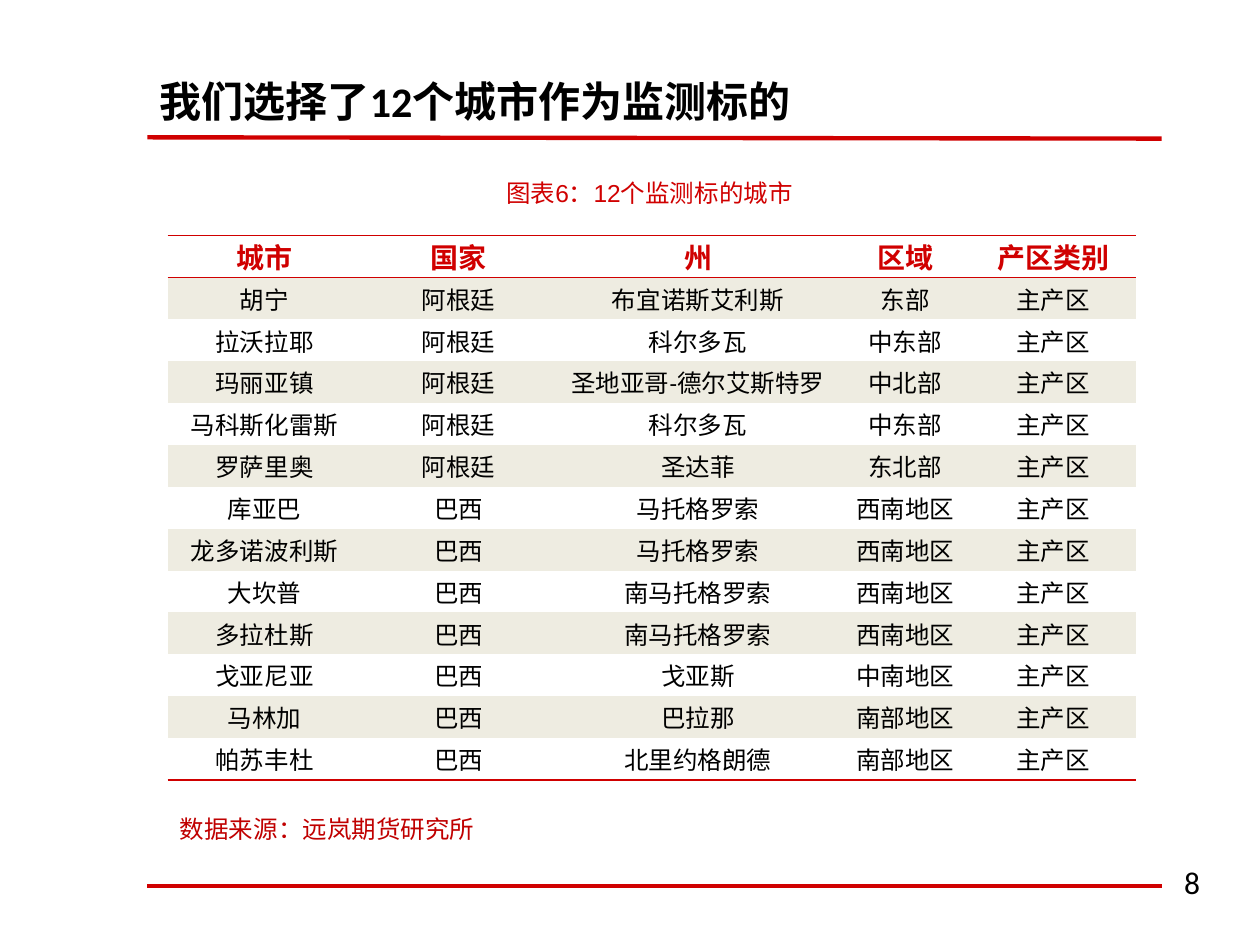
"""Build the slide that lists the twelve monitored cities."""
from typing import NamedTuple

from lxml.etree import SubElement
from pptx import Presentation
from pptx.dml.color import RGBColor
from pptx.enum.shapes import MSO_CONNECTOR as Connector
from pptx.enum.text import MSO_ANCHOR as Anchor, MSO_AUTO_SIZE as AutoSize, PP_ALIGN as Align
from pptx.oxml.ns import qn
from pptx.util import Inches, Pt

RED, DARK_RED, BLACK, BAND = "D00000", "C00000", "000000", "EEECE1"
LATIN, CHINESE, NUMERAL = "Calibri", "Noto Sans CJK SC", "Arial"


class Style(NamedTuple):
    size: float
    color: str = BLACK
    font: str = LATIN
    bold: bool = False


class Caption(NamedTuple):
    left: float
    top: float
    width: float
    height: float
    runs: list[tuple[str, Style]]
    align: Align = Align.LEFT
    anchor: Anchor = Anchor.TOP
    wrap: bool = True
    grow: bool = True


class City(NamedTuple):
    name: str
    country: str
    state: str
    region: str
    category: str = "主产区"


HEADER = City("城市", "国家", "州", "区域", "产区类别")
CITIES = [
    City("胡宁", "阿根廷", "布宜诺斯艾利斯", "东部"),
    City("拉沃拉耶", "阿根廷", "科尔多瓦", "中东部"),
    City("玛丽亚镇", "阿根廷", "圣地亚哥-德尔艾斯特罗", "中北部"),
    City("马科斯化雷斯", "阿根廷", "科尔多瓦", "中东部"),
    City("罗萨里奥", "阿根廷", "圣达菲", "东北部"),
    City("库亚巴", "巴西", "马托格罗索", "西南地区"),
    City("龙多诺波利斯", "巴西", "马托格罗索", "西南地区"),
    City("大坎普", "巴西", "南马托格罗索", "西南地区"),
    City("多拉杜斯", "巴西", "南马托格罗索", "西南地区"),
    City("戈亚尼亚", "巴西", "戈亚斯", "中南地区"),
    City("马林加", "巴西", "巴拉那", "南部地区"),
    City("帕苏丰杜", "巴西", "北里约格朗德", "南部地区"),
]
COLUMN_WIDTHS = [1.54, 1.54, 2.26, 1.03, 1.32]
RULES = [(1.09, 1.1), (7.03, 7.03)]

FIGURE_TEXT = Style(14, RED, CHINESE)
FIGURE_NUMBER = Style(14, RED, NUMERAL)
CAPTIONS = [
    Caption(1.17, 0.55, 8.2, 0.55,
            [("我们选择了12个城市作为监测标的", Style(24, bold=True))], grow=False),
    Caption(1.17, 1.36, 7.97, 0.34,
            [("图表", FIGURE_TEXT), ("6", FIGURE_NUMBER), ("：", FIGURE_TEXT),
             ("12", FIGURE_NUMBER), ("个监测标的城市", FIGURE_TEXT)],
            Align.CENTER, Anchor.MIDDLE),
    Caption(1.33, 6.41, 3.83, 0.34,
            [("数据来源：远岚期货研究所", Style(14, DARK_RED, CHINESE))], anchor=Anchor.MIDDLE),
    Caption(9.3, 6.8, 0.5, 0.4, [("8", Style(18))], wrap=False),
]


def rgb(color: str) -> RGBColor:
    return RGBColor.from_string(color)


def add_run(paragraph, text: str, style: Style) -> None:
    run = paragraph.add_run()
    run.text = text
    run.font.size = Pt(style.size)
    run.font.bold = style.bold
    run.font.name = style.font
    run.font.color.rgb = rgb(style.color)
    SubElement(run._r.get_or_add_rPr(), qn("a:ea"), typeface=CHINESE)


def add_caption(slide, caption: Caption) -> None:
    shape = slide.shapes.add_textbox(Inches(caption.left), Inches(caption.top),
                                     Inches(caption.width), Inches(caption.height))
    frame = shape.text_frame
    frame.word_wrap = caption.wrap
    frame.auto_size = AutoSize.SHAPE_TO_FIT_TEXT if caption.grow else AutoSize.NONE
    frame.vertical_anchor = caption.anchor
    paragraph = frame.paragraphs[0]
    paragraph.alignment = caption.align
    for text, style in caption.runs:
        add_run(paragraph, text, style)


def add_rule(slide, start: float, end: float) -> None:
    connector = slide.shapes.add_connector(Connector.STRAIGHT, Inches(1.17), Inches(start),
                                           Inches(9.22), Inches(end))
    connector.line.color.rgb = rgb(RED)
    connector.line.width = Pt(2.5)
    SubElement(connector._element.spPr, qn("a:effectLst"))


def set_borders(cell, red_sides: str) -> None:
    properties = cell._tc.get_or_add_tcPr()
    for side in "LRTB":
        border = SubElement(properties, qn(f"a:ln{side}"), w=str(Pt(1)))
        if side in red_sides:
            fill = SubElement(border, qn("a:solidFill"))
            SubElement(fill, qn("a:srgbClr"), val=RED)
        else:
            SubElement(border, qn("a:noFill"))


def fill_cell(cell, text: str, style: Style, red_sides: str, banded: bool) -> None:
    set_borders(cell, red_sides)
    if banded:
        cell.fill.solid()
        cell.fill.fore_color.rgb = rgb(BAND)
    else:
        cell.fill.background()
    cell.vertical_anchor = Anchor.MIDDLE
    cell.margin_left = cell.margin_right = Inches(0.07)
    cell.margin_top = cell.margin_bottom = 0
    paragraph = cell.text_frame.paragraphs[0]
    paragraph.alignment = Align.CENTER
    add_run(paragraph, text, style)


def add_city_table(slide) -> None:
    rows = [HEADER, *CITIES]
    table = slide.shapes.add_table(len(rows), len(COLUMN_WIDTHS), Inches(1.33), Inches(1.87),
                                   Inches(sum(COLUMN_WIDTHS)), Inches(4.32)).table
    table.first_row = table.horz_banding = False
    for column, width in zip(table.columns, COLUMN_WIDTHS):
        column.width = Inches(width)
    red_sides = {0: "TB", 1: "T", len(rows) - 1: "B"}
    for index, city in enumerate(rows):
        style = Style(14) if index else Style(16, RED, bold=True)
        for column, text in enumerate(city):
            fill_cell(table.cell(index, column), text, style,
                      red_sides.get(index, ""), index % 2 == 1)


def main() -> None:
    presentation = Presentation()
    presentation.slide_width, presentation.slide_height = Inches(10), Inches(7.5)
    slide = presentation.slides.add_slide(presentation.slide_layouts[6])
    for start, end in RULES:
        add_rule(slide, start, end)
    add_city_table(slide)
    for caption in CAPTIONS:
        add_caption(slide, caption)
    presentation.save("out.pptx")


if __name__ == "__main__":
    main()
